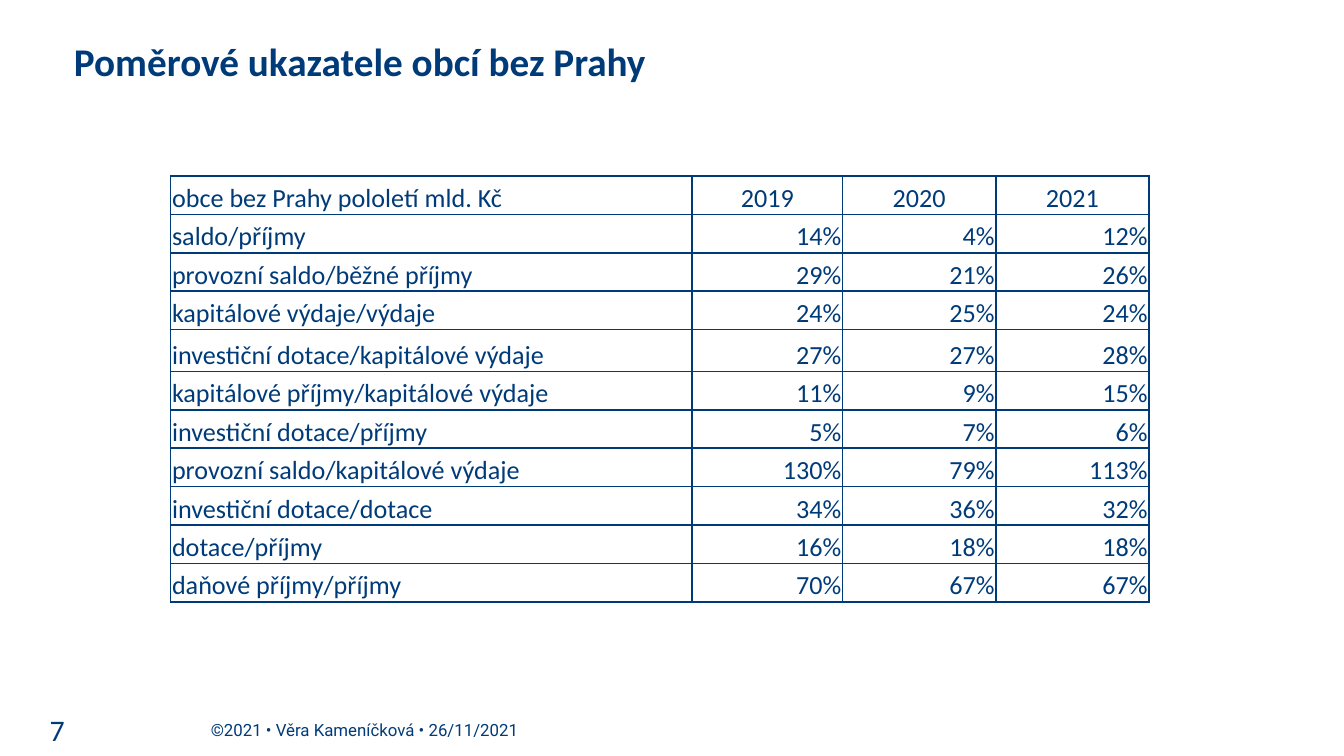
from lxml import etree
from pptx import Presentation
from pptx.dml.color import RGBColor
from pptx.enum.text import MSO_ANCHOR, PP_ALIGN
from pptx.oxml.ns import qn
from pptx.util import Inches, Pt

LEFT, CENTER, RIGHT = PP_ALIGN.LEFT, PP_ALIGN.CENTER, PP_ALIGN.RIGHT
TOP, MIDDLE, BOTTOM = MSO_ANCHOR.TOP, MSO_ANCHOR.MIDDLE, MSO_ANCHOR.BOTTOM
TITLE_ONLY = 5

COLORS = {"navy": "003B79", "footer": "013B79"}

HEADER = ("obce bez Prahy pololetí mld. Kč", 2019, 2020, 2021)
RATIOS = [
    ("saldo/příjmy", 14, 4, 12),
    ("provozní saldo/běžné příjmy", 29, 21, 26),
    ("kapitálové výdaje/výdaje", 24, 25, 24),
    ("investiční dotace/kapitálové výdaje", 27, 27, 28),
    ("kapitálové příjmy/kapitálové výdaje", 11, 9, 15),
    ("investiční dotace/příjmy", 5, 7, 6),
    ("provozní saldo/kapitálové výdaje", 130, 79, 113),
    ("investiční dotace/dotace", 34, 36, 32),
    ("dotace/příjmy", 16, 18, 18),
    ("daňové příjmy/příjmy", 70, 67, 67),
]
COLUMN_WIDTHS = (3.88, 1.12, 1.14, 1.14)
TABLE_HEIGHT = 3.17
TALL_ROW, TALL_HEIGHT = 4, 0.31


def write(frame, text, size, color="navy", font="Calibri", align=LEFT, bold=False):
    frame.text = text
    para = frame.paragraphs[0]
    para.alignment = align
    for span in para.runs:
        span.font.size = Pt(size)
        span.font.name = font
        span.font.bold = bold
        span.font.color.rgb = RGBColor.from_string(COLORS[color])


def add_title(page, text):
    title = page.shapes.title
    title.left, title.top = Inches(0.5), Inches(0.23)
    title.width, title.height = Inches(9), Inches(0.44)
    frame = title.text_frame
    frame.margin_left = frame.margin_right = Inches(0.05)
    frame.margin_top = frame.margin_bottom = Inches(0.05)
    frame.vertical_anchor = TOP
    write(frame, text, 21, bold=True)


def add_footer(page, left, width, text, size, font, align=LEFT):
    box = page.shapes.add_textbox(Inches(left), Inches(5.28), Inches(width), Inches(0.3))
    frame = box.text_frame
    frame.word_wrap = True
    frame.vertical_anchor = MIDDLE
    write(frame, text, size, "footer", font, align)


def add_borders(cell):
    properties = cell._tc.get_or_add_tcPr()
    for side in ("a:lnL", "a:lnR", "a:lnT", "a:lnB"):
        line = etree.SubElement(properties, qn(side), w=str(Pt(1)))
        fill = etree.SubElement(line, qn("a:solidFill"))
        etree.SubElement(fill, qn("a:srgbClr"), val=COLORS["navy"])


def fill_cell(cell, text, align):
    cell.margin_left = cell.margin_right = cell.margin_top = Inches(0.01)
    cell.margin_bottom = 0
    cell.vertical_anchor = BOTTOM
    add_borders(cell)
    cell.fill.background()
    write(cell.text_frame, text, 14, align=align)


def add_ratio_table(page):
    row_count = len(RATIOS) + 1
    table = page.shapes.add_table(
        row_count, len(HEADER), Inches(1.27), Inches(1.31),
        Inches(sum(COLUMN_WIDTHS)), Inches(TABLE_HEIGHT)).table
    for column, width in zip(table.columns, COLUMN_WIDTHS):
        column.width = Inches(width)

    # All rows but the tall one share the remaining height
    row_height = (TABLE_HEIGHT - TALL_HEIGHT) / (row_count - 1)
    for index, (label, *values) in enumerate([HEADER] + RATIOS):
        table.rows[index].height = Inches(TALL_HEIGHT if index == TALL_ROW else row_height)
        fill_cell(table.cell(index, 0), label, LEFT)
        for column, value in enumerate(values, 1):
            text, align = (f"{value}%", RIGHT) if index else (str(value), CENTER)
            fill_cell(table.cell(index, column), text, align)


def main():
    # Widescreen page, 16:9
    deck = Presentation()
    deck.slide_width = Inches(10)
    deck.slide_height = Inches(10 * 9 / 16)
    page = deck.slides.add_slide(deck.slide_layouts[TITLE_ONLY])

    # Title
    add_title(page, "Poměrové ukazatele obcí bez Prahy")

    # Footer and page number
    add_footer(page, 1.47, 3.38, "©2021 • Věra Kameníčková • 26/11/2021", 9, "Roboto")
    add_footer(page, -0.08, 0.66, "7", 16, "Calibri", RIGHT)

    # Table of ratios
    add_ratio_table(page)

    deck.save("out.pptx")


if __name__ == "__main__":
    main()
